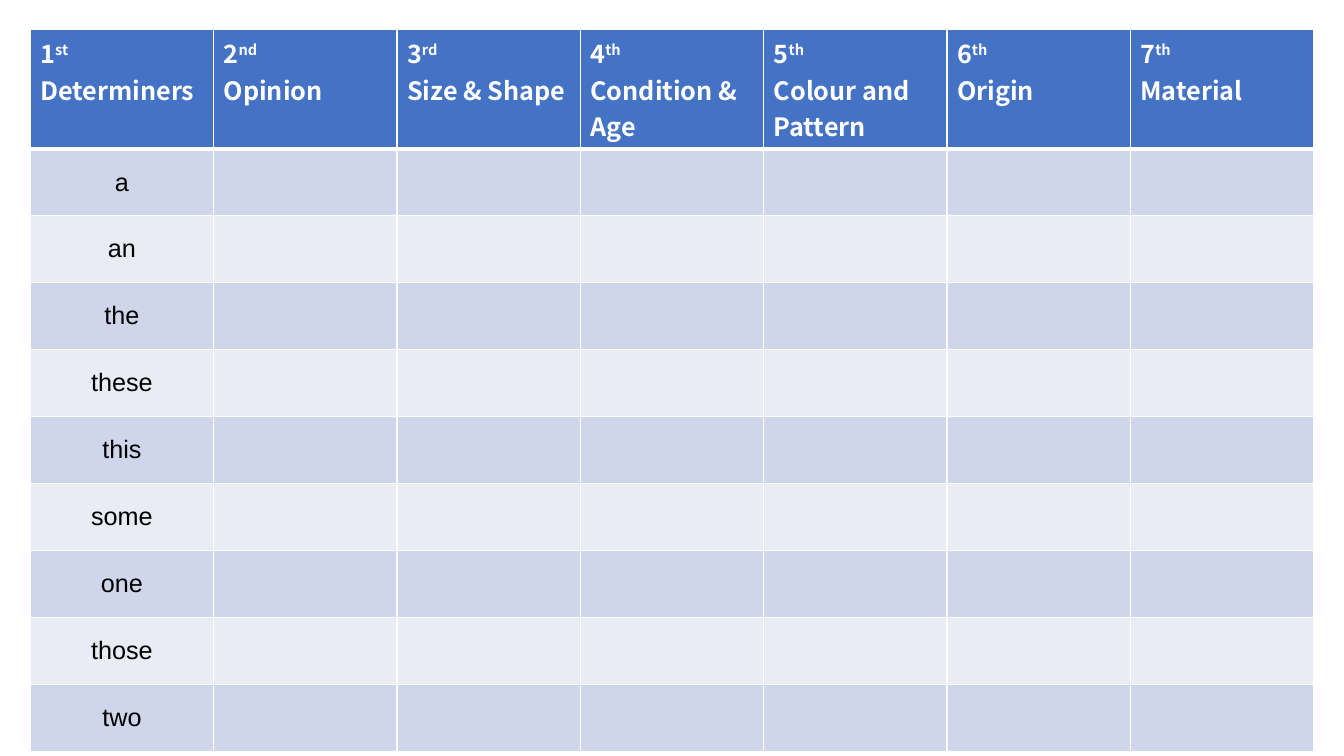
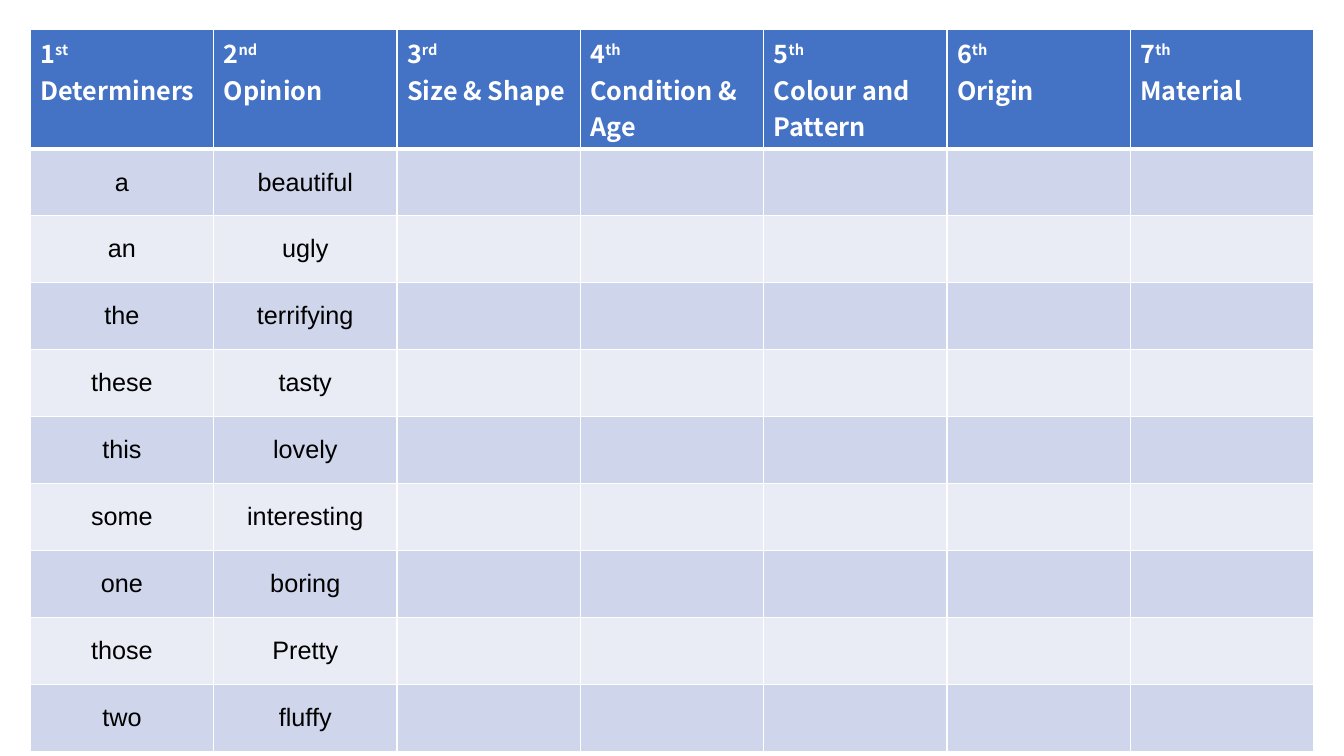
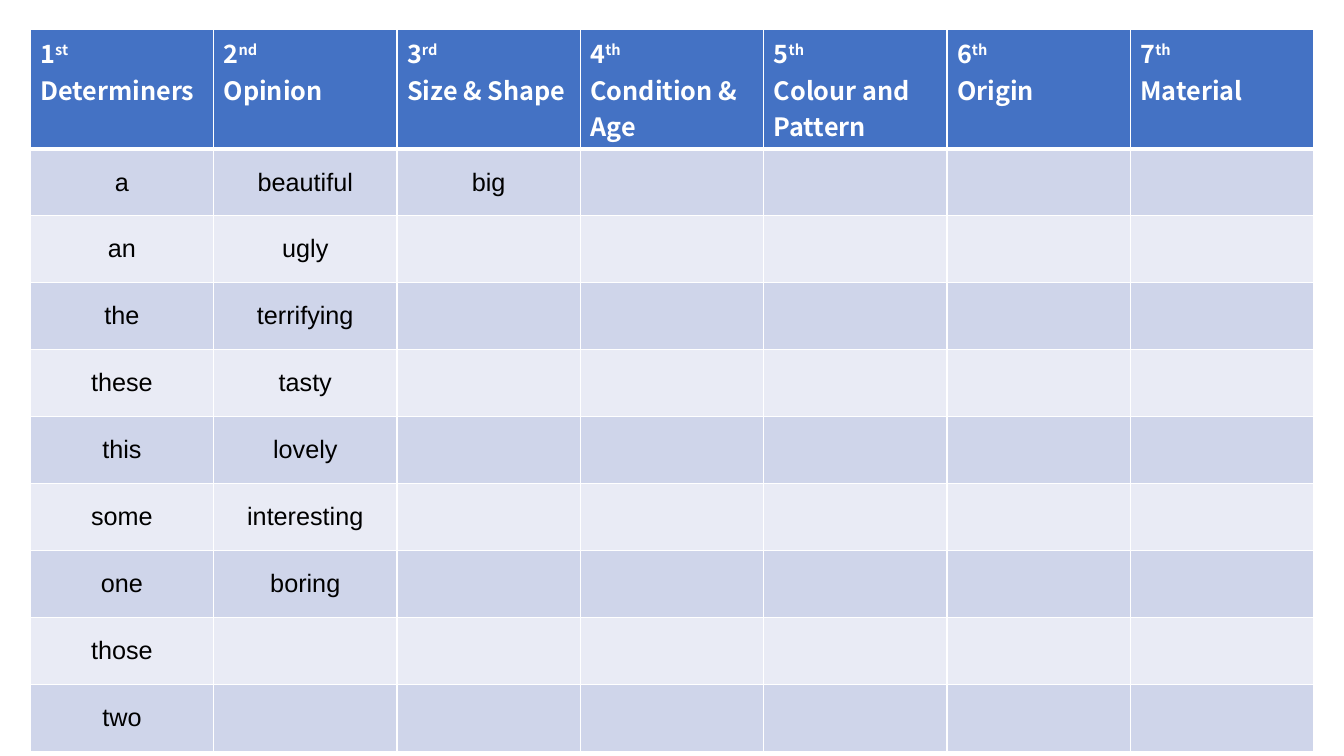
from lxml import etree
from pptx import Presentation
from pptx.dml.color import RGBColor
from pptx.enum.text import MSO_ANCHOR, PP_ALIGN
from pptx.oxml.ns import qn
from pptx.util import Inches, Pt

CENTER = PP_ALIGN.CENTER
MIDDLE = MSO_ANCHOR.MIDDLE

WHITE, BLACK, HEADER_BLUE = "FFFFFF", "000000", "4472C4"
BANDS = ("CFD5EA", "E9EBF5")
HEADING_FONT, WORD_FONT = "Noto Sans CJK JP", "Arial"
TEXT_SIZE = 18
SUPERSCRIPT = "30000"
THIN, THICK = 1, 3

TABLE_BOX = (0.3, 0.29, 12.73, 6.93)
HEADER_HEIGHT = 0.95

HEADINGS = [
    ("1", "st", "Determiners"),
    ("2", "nd", "Opinion"),
    ("3", "rd", "Size & Shape"),
    ("4", "th", "Condition & Age"),
    ("5", "th", "Colour and Pattern"),
    ("6", "th", "Origin"),
    ("7", "th", "Material"),
]
DETERMINERS = ["a", "an", "the", "these", "this", "some", "one", "those", "two"]
OPINIONS = ["beautiful", "ugly", "terrifying", "tasty", "lovely", "interesting",
            "boring", "Pretty", "fluffy"]
SIZES = ["big"]
SLIDE_WORDS = [
    [DETERMINERS],
    [DETERMINERS, OPINIONS],
    [DETERMINERS, OPINIONS[:7], SIZES],
]


def colour(hex_value):
    return RGBColor.from_string(hex_value)


def style_run(run, font, text_colour, bold):
    run.font.name = font
    run.font.size = Pt(TEXT_SIZE)
    run.font.bold = bold
    run.font.color.rgb = colour(text_colour)


def style_cell(cell, fill, top, bottom):
    properties = cell._tc.get_or_add_tcPr()
    for side, width in (("L", THIN), ("R", THIN), ("T", top), ("B", bottom)):
        border = etree.SubElement(properties, qn(f"a:ln{side}"), w=str(Pt(width)))
        border_fill = etree.SubElement(border, qn("a:solidFill"))
        etree.SubElement(border_fill, qn("a:srgbClr"), val=WHITE)
    cell.fill.solid()
    cell.fill.fore_color.rgb = colour(fill)


def fill_heading(cell, number, suffix, category):
    style_cell(cell, HEADER_BLUE, THIN, THICK)
    order_line = cell.text_frame.paragraphs[0]
    order_line.text = number
    suffix_run = order_line.add_run()
    suffix_run.text = suffix
    suffix_run._r.get_or_add_rPr().set("baseline", SUPERSCRIPT)
    category_line = cell.text_frame.add_paragraph()
    category_line.text = category
    for run in order_line.runs + category_line.runs:
        style_run(run, HEADING_FONT, WHITE, True)


def fill_word(cell, word):
    cell.vertical_anchor = MIDDLE
    line = cell.text_frame.paragraphs[0]
    line.text = word
    line.alignment = CENTER
    style_run(line.runs[0], WORD_FONT, BLACK, False)


def add_word_table(slide, box, word_columns):
    left, top, width, height = box
    row_count = len(DETERMINERS)
    table = slide.shapes.add_table(
        row_count + 1, len(HEADINGS), *(Inches(length) for length in box)).table
    table.first_row = False
    table.horz_banding = False
    for column in table.columns:
        column.width = Inches(width / len(HEADINGS))
    for row in table.rows:
        row.height = Inches((height - HEADER_HEIGHT) / row_count)
    table.rows[0].height = Inches(HEADER_HEIGHT)

    for column, heading in enumerate(HEADINGS):
        fill_heading(table.cell(0, column), *heading)
        for row in range(row_count):
            top_border = THIN if row else THICK
            style_cell(table.cell(row + 1, column), BANDS[row % 2], top_border, THIN)
    for column, words in enumerate(word_columns):
        for row, word in enumerate(words, 1):
            fill_word(table.cell(row, column), word)


def main():
    presentation = Presentation()
    presentation.slide_width = Inches(13.33)
    presentation.slide_height = Inches(7.5)
    blank = presentation.slide_layouts[6]
    for word_columns in SLIDE_WORDS:
        add_word_table(presentation.slides.add_slide(blank), TABLE_BOX, word_columns)
    presentation.save("out.pptx")


if __name__ == "__main__":
    main()
